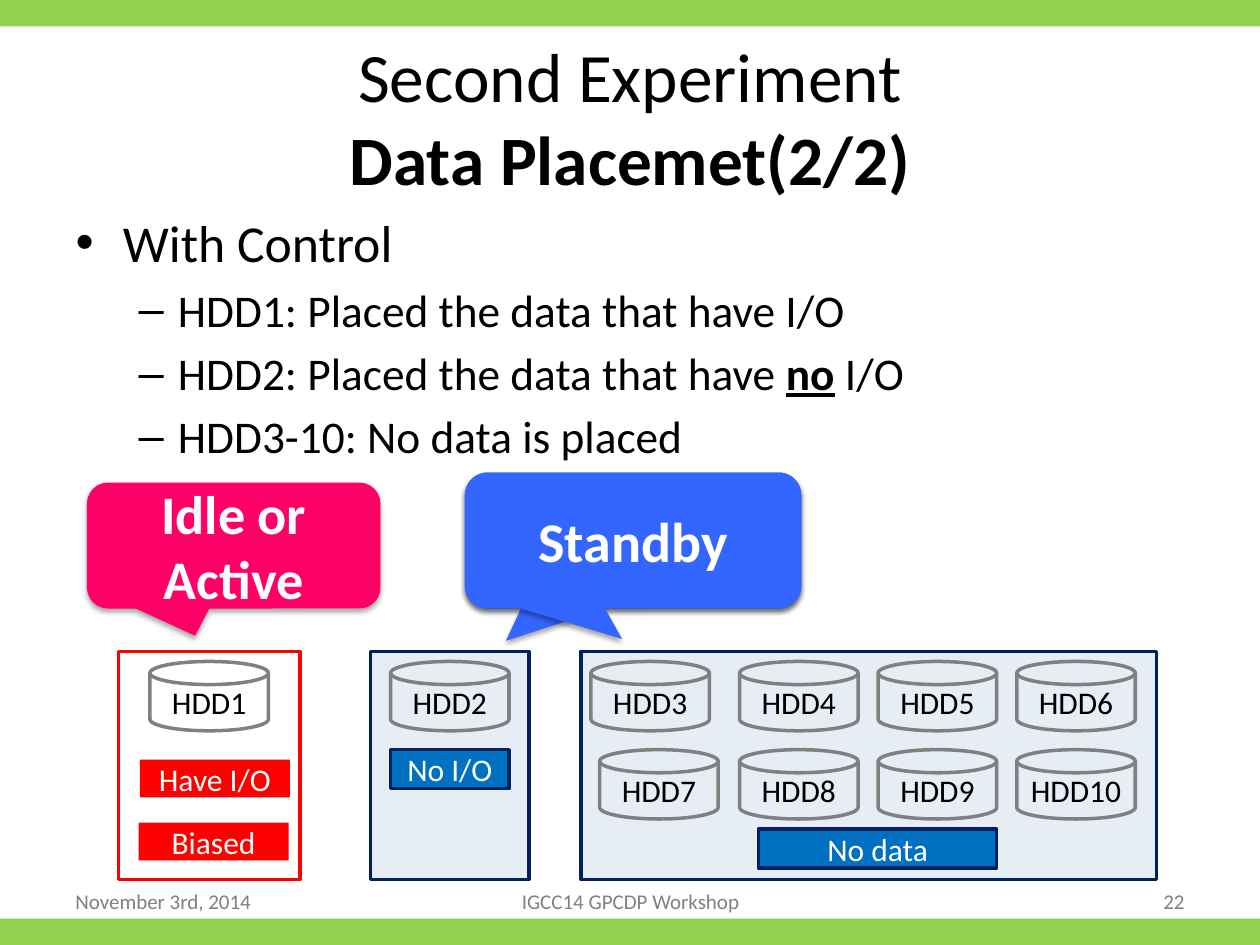
"""Build the data placement slide with its storage diagram."""
from dataclasses import dataclass
from typing import Optional

from lxml.etree import SubElement
from pptx import Presentation
from pptx.dml.color import RGBColor
from pptx.enum.shapes import MSO_SHAPE
from pptx.enum.text import MSO_ANCHOR, MSO_AUTO_SIZE, PP_ALIGN
from pptx.oxml.ns import qn
from pptx.util import Inches, Pt


@dataclass(frozen=True)
class Theme:
    """Colours and type sizes."""
    font: str = "Calibri"
    black: str = "000000"
    white: str = "FFFFFF"
    grey: str = "808080"
    green: str = "92D050"
    red: str = "FF0000"
    pink: str = "FF0066"
    callout_blue: str = "3366FF"
    label_blue: str = "0070C0"
    navy: str = "002060"
    pale_blue: str = "DCE6F2"
    title_size: float = 39.6
    body_size: float = 29.6
    item_size: float = 25.9
    label_size: float = 18
    footer_size: float = 12


@dataclass(frozen=True)
class Box:
    """Position and size in inches."""
    left: float
    top: float
    width: float
    height: float

    def lengths(self) -> tuple:
        """Return the box as slide lengths."""
        return tuple(Inches(value) for value in (self.left, self.top, self.width, self.height))


@dataclass(frozen=True)
class Style:
    """Fill, outline and text format of a shape."""
    fill: Optional[str] = None
    line: Optional[str] = None
    opacity: Optional[int] = None
    text_color: str = Theme.white


@dataclass(frozen=True)
class Callout:
    """A speech bubble with the tip as a fraction of its size."""
    text: str
    box: Box
    tip: tuple
    color: str
    size: float = 32


THEME = Theme()
BAND = Style(THEME.green)
STANDBY_GROUP = Style(THEME.pale_blue, THEME.navy, opacity=71)
ACTIVE_GROUP = Style(line=THEME.red)
DISK = Style(line=THEME.grey, text_color=THEME.black)
ACTIVE_LABEL = Style(THEME.red)
STANDBY_LABEL = Style(THEME.label_blue, THEME.navy)

DISK_WIDTH, DISK_HEIGHT = 0.94, 0.55
DISK_ROWS = (5.25, 5.95)
SHARED_COLUMNS = [5.87 + 1.1 * column for column in range(3)]
STANDBY_BOX = Box(3.69, 3.75, 2.67, 1.08)
CALLOUTS = (
    Callout("Idle or Active", Box(0.69, 3.83, 2.33, 1), (-0.131, 0.716), THEME.pink, 31),
    Callout("", STANDBY_BOX, (-0.378, 0.737), THEME.callout_blue),
    Callout("Standby", STANDBY_BOX, (-0.033, 0.723), THEME.callout_blue),
)


def write(paragraph, text: str, *, size: float, color: str = THEME.black,
          bold: bool = False, underline: bool = False, align=None) -> None:
    """Append a formatted run to a paragraph."""
    if align is not None:
        paragraph.alignment = align
    run = paragraph.add_run()
    run.text = text
    run.font.name = THEME.font
    run.font.size = Pt(size)
    run.font.bold = bold
    run.font.underline = underline
    run.font.color.rgb = RGBColor.from_string(color)


def draw_shape(slide, kind, box: Box, style: Style, text: str = "",
               size: float = THEME.label_size, bold: bool = False):
    """Draw a preset shape with an optional centred label."""
    shape = slide.shapes.add_shape(kind, *box.lengths())
    shape.shadow.inherit = False
    if style.fill:
        shape.fill.solid()
        shape.fill.fore_color.rgb = RGBColor.from_string(style.fill)
        if style.opacity:
            color = shape.fill._xPr.find(qn("a:solidFill"))[0]
            SubElement(color, qn("a:alpha"), val=str(style.opacity * 1000))
    else:
        shape.fill.background()
    if style.line:
        shape.line.color.rgb = RGBColor.from_string(style.line)
        shape.line.width = Pt(2)
    else:
        shape.line.fill.background()
    if text:
        shape.text_frame.word_wrap = True
        shape.text_frame.vertical_anchor = MSO_ANCHOR.MIDDLE
        write(shape.text_frame.paragraphs[0], text, size=size, color=style.text_color,
              bold=bold, align=PP_ALIGN.CENTER)
    return shape


def draw_disk(slide, number: int, left: float, top: float) -> None:
    """Draw one numbered disk."""
    draw_shape(slide, MSO_SHAPE.FLOWCHART_MAGNETIC_DISK,
               Box(left, top, DISK_WIDTH, DISK_HEIGHT), DISK, f"HDD{number}")


def draw_callout(slide, callout: Callout) -> None:
    """Draw a speech bubble with a soft shadow."""
    shape = draw_shape(slide, MSO_SHAPE.ROUNDED_RECTANGULAR_CALLOUT, callout.box,
                       Style(callout.color), callout.text, callout.size, bold=True)
    for index, value in enumerate((*callout.tip, 0.167)):
        shape.adjustments[index] = value
    effects = shape._element.spPr.find(qn("a:effectLst"))
    shadow = SubElement(effects, qn("a:outerShdw"), blurRad=str(Pt(3.1)), dist=str(Pt(1.8)),
                        dir="5400000", rotWithShape="0")
    color = SubElement(shadow, qn("a:srgbClr"), val=THEME.black)
    SubElement(color, qn("a:alpha"), val="35000")


def place(placeholder, box: Box):
    """Move a placeholder and return its text frame."""
    placeholder.left, placeholder.top, placeholder.width, placeholder.height = box.lengths()
    placeholder.text_frame.auto_size = MSO_AUTO_SIZE.NONE
    return placeholder.text_frame


def fill_placeholders(slide) -> None:
    """Write the title and the bullet list."""
    title = place(slide.shapes.title, Box(0.5, 0.3, 9, 1.25))
    heading = title.paragraphs[0]
    write(heading, "Second Experiment", size=THEME.title_size, align=PP_ALIGN.CENTER)
    heading.add_line_break()
    write(heading, "Data Placemet(2/2)", size=THEME.title_size, bold=True)

    body = place(slide.placeholders[1], Box(0.5, 1.62, 9, 2.13))
    write(body.paragraphs[0], "With Control", size=THEME.body_size)
    items = (("HDD1: Placed the data that have I/O",),
             ("HDD2: Placed the data that have ", "no", " I/O"),
             ("HDD3-10: No data is placed",))
    for parts in items:
        paragraph = body.add_paragraph()
        paragraph.level = 1
        for part in parts:
            stressed = part == "no"
            write(paragraph, part, size=THEME.item_size, bold=stressed, underline=stressed)


def draw_footer(slide) -> None:
    """Write the date, the event and the slide number."""
    for text, left, width, align in (("November 3rd, 2014", 0.5, 2.33, PP_ALIGN.LEFT),
                                     ("IGCC14 GPCDP Workshop", 3.42, 3.17, PP_ALIGN.CENTER),
                                     ("22", 7.17, 2.33, PP_ALIGN.RIGHT)):
        frame = slide.shapes.add_textbox(*Box(left, 6.95, width, 0.4).lengths()).text_frame
        frame.word_wrap = True
        frame.vertical_anchor = MSO_ANCHOR.MIDDLE
        write(frame.paragraphs[0], text, size=THEME.footer_size, color=THEME.grey, align=align)


def draw_storage(slide) -> None:
    """Draw the disk groups with their disks and labels."""
    for left, width, style in ((2.94, 1.26, STANDBY_GROUP), (4.61, 4.57, STANDBY_GROUP),
                               (0.94, 1.44, ACTIVE_GROUP)):
        draw_shape(slide, MSO_SHAPE.RECTANGLE, Box(left, 5.17, width, 1.81), style)
    rows = ((1.19, 3.1, 4.69, *SHARED_COLUMNS), (4.76, *SHARED_COLUMNS))
    places = [(left, top) for columns, top in zip(rows, DISK_ROWS) for left in columns]
    for number, (left, top) in enumerate(places, start=1):
        draw_disk(slide, number, left, top)
    for text, box, style in (("Have I/O", Box(1.11, 6.03, 1.19, 0.3), ACTIVE_LABEL),
                             ("Biased", Box(1.1, 6.53, 1.19, 0.3), ACTIVE_LABEL),
                             ("No I/O", Box(3.1, 5.95, 0.94, 0.31), STANDBY_LABEL),
                             ("No data", Box(6.02, 6.58, 1.89, 0.31), STANDBY_LABEL)):
        draw_shape(slide, MSO_SHAPE.RECTANGLE, box, style, text)


def main() -> None:
    """Build and save the presentation."""
    presentation = Presentation()
    presentation.slide_width, presentation.slide_height = Inches(10), Inches(7.5)
    slide = presentation.slides.add_slide(presentation.slide_layouts[1])
    for top in (0, 7.29):
        draw_shape(slide, MSO_SHAPE.RECTANGLE, Box(0, top, 10, 0.21), BAND)
    fill_placeholders(slide)
    draw_footer(slide)
    draw_storage(slide)
    for callout in CALLOUTS:
        draw_callout(slide, callout)
    presentation.save("out.pptx")


if __name__ == "__main__":
    main()
